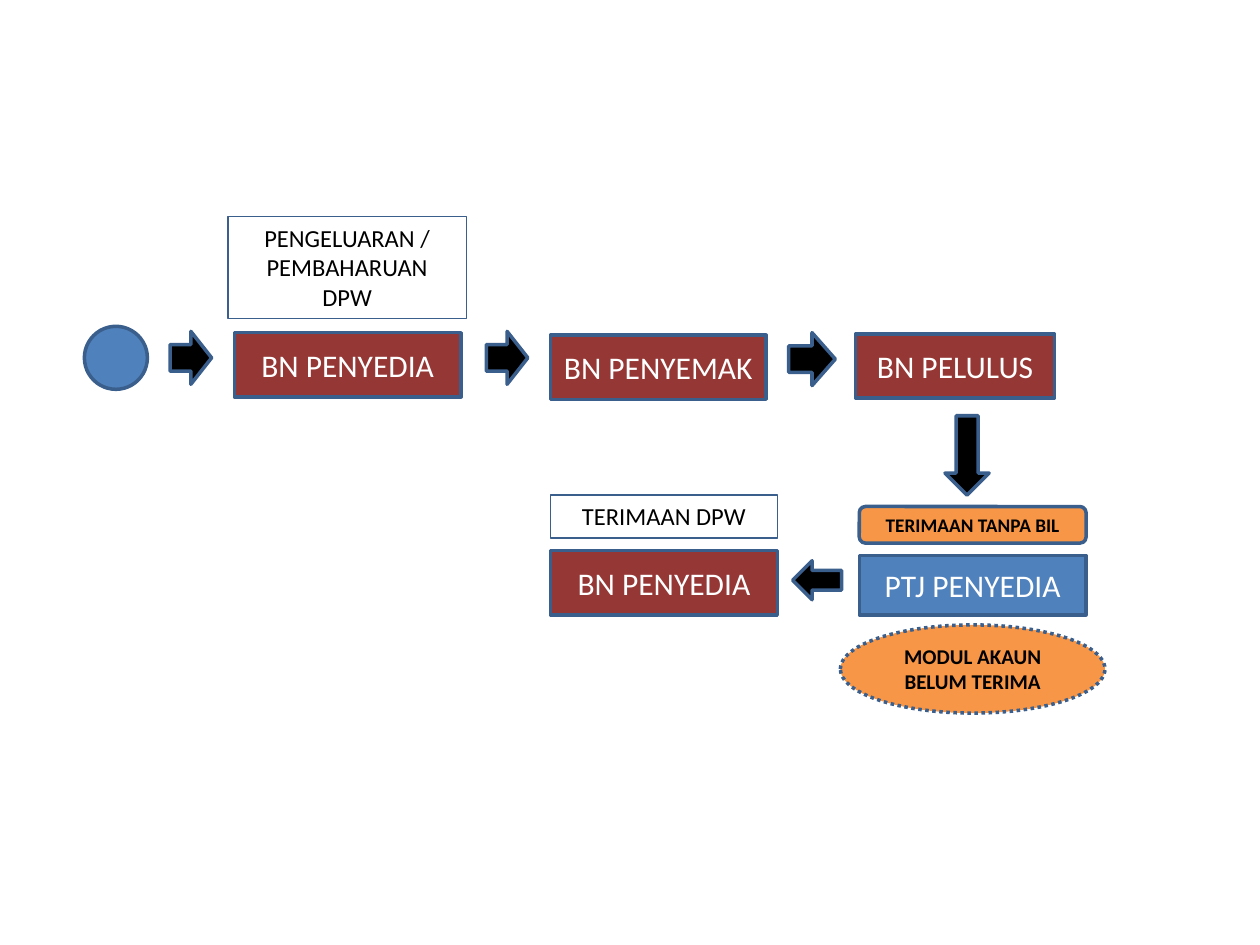
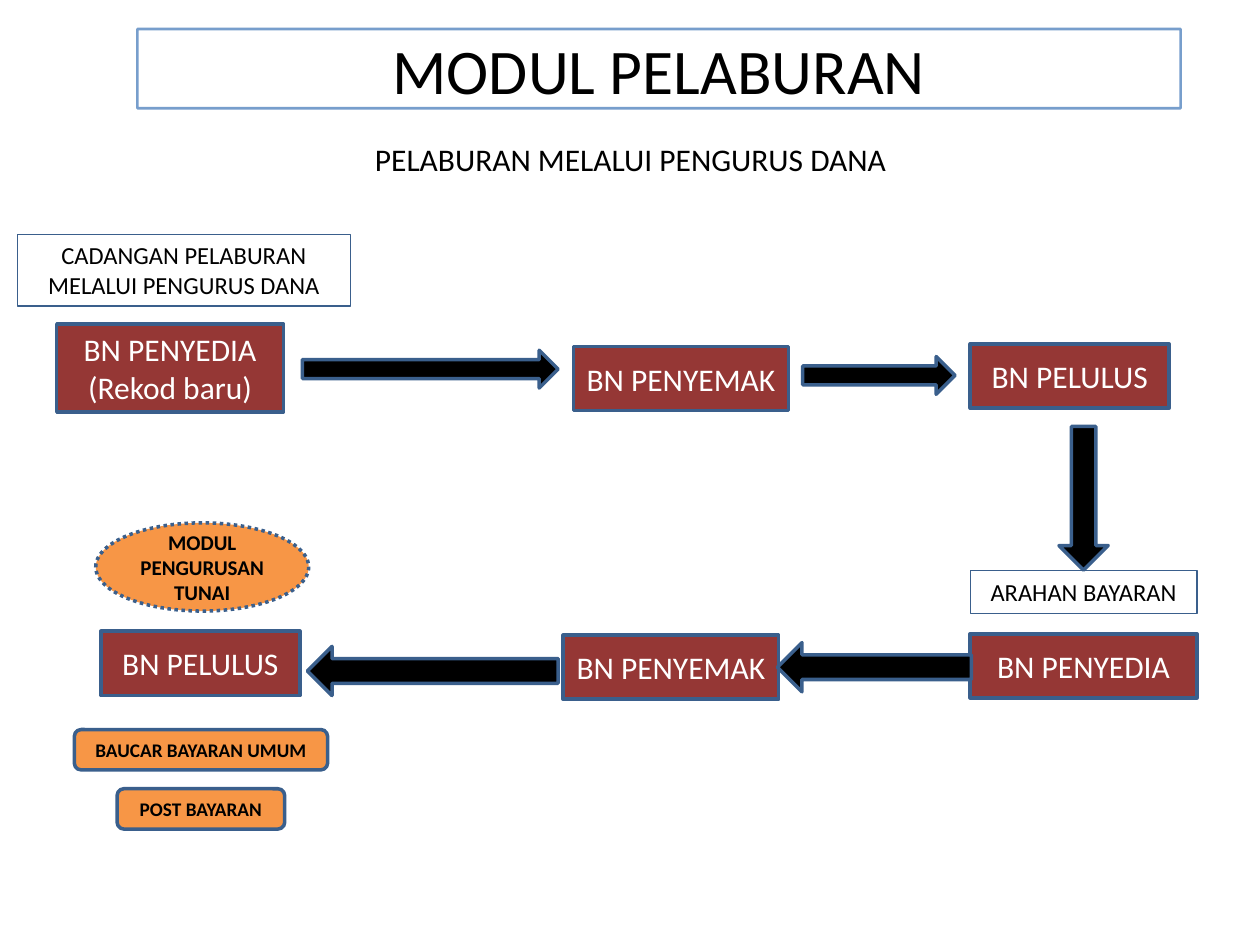
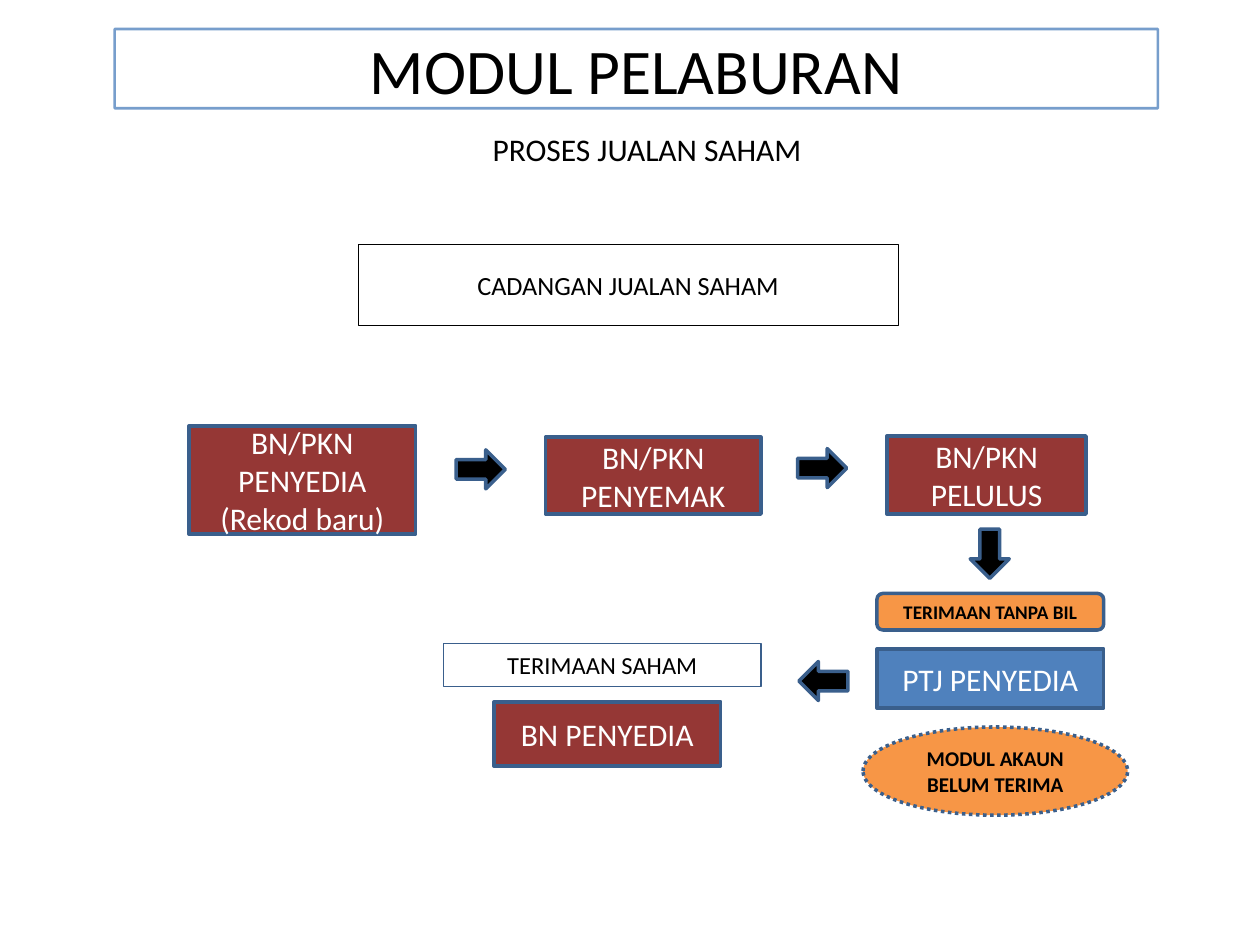
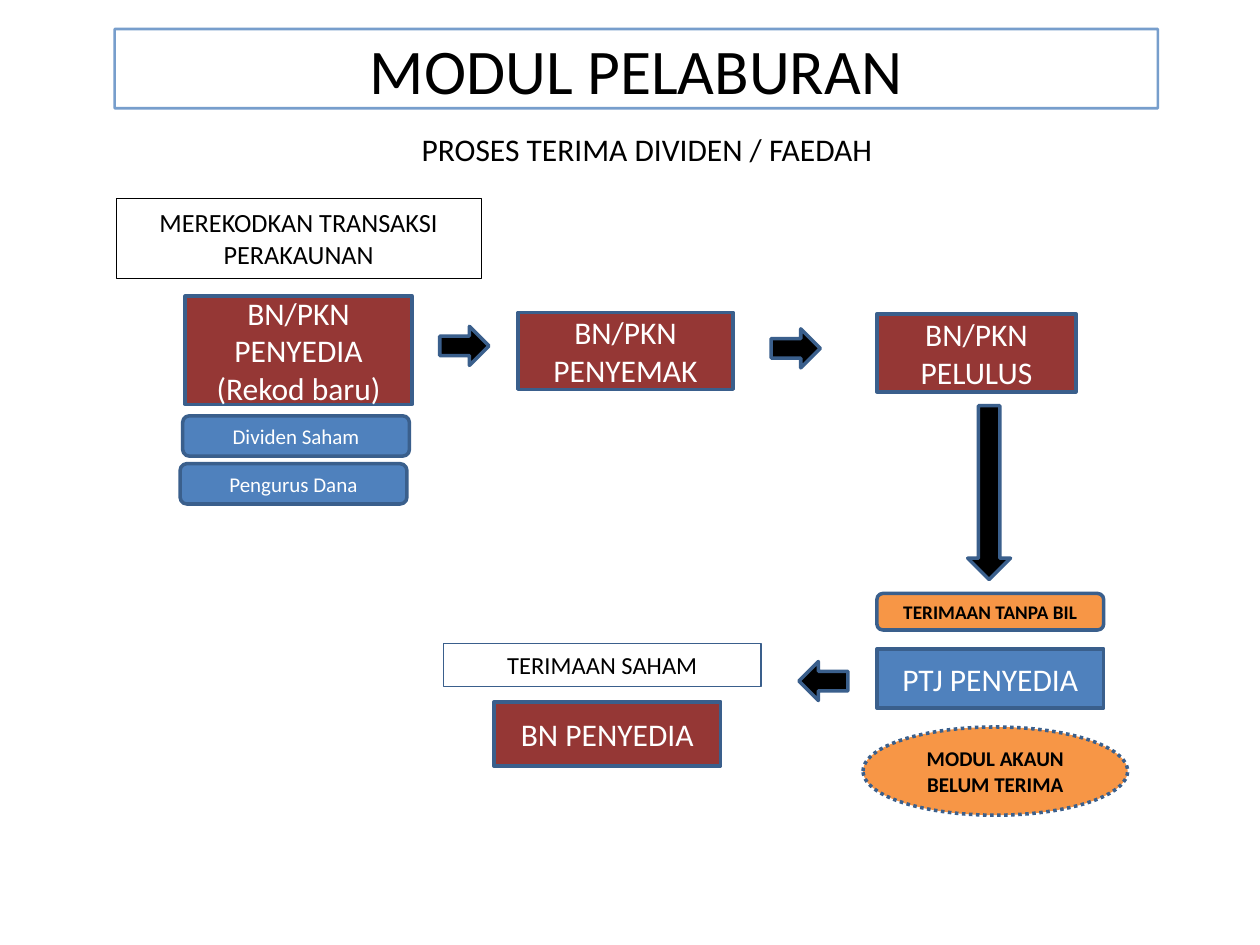
"""Build four flow-chart slides of the investment module."""
from lxml.etree import SubElement
from pptx import Presentation
from pptx.dml.color import RGBColor
from pptx.enum.dml import MSO_LINE
from pptx.enum.shapes import MSO_SHAPE as Shape
from pptx.enum.text import MSO_ANCHOR as Anchor, MSO_AUTO_SIZE as AutoSize, PP_ALIGN as Align
from pptx.oxml.ns import qn
from pptx.util import Emu, Pt

PX = 9144
FONT = "Calibri"
BLACK = RGBColor(0x00, 0x00, 0x00)
WHITE = RGBColor(0xFF, 0xFF, 0xFF)
MAROON = RGBColor(0x95, 0x37, 0x35)
BLUE = RGBColor(0x4F, 0x81, 0xBD)
NAVY = RGBColor(0x3A, 0x5F, 0x8C)
ORANGE = RGBColor(0xF7, 0x96, 0x46)
MAKER, CHECKER, APPROVER = 180, 171, 158
TITLE_ONLY, BLANK = 5, 6


class FlowDeck:
    def __init__(self):
        self.deck = Presentation()
        self.deck.slide_width = Emu(1000 * PX)
        self.deck.slide_height = Emu(750 * PX)
        self.page = None

    def add_page(self, layout):
        self.page = self.deck.slides.add_slide(self.deck.slide_layouts[layout])

    def add_text(self, box, text, size, color=BLACK, bold=False, anchor=Anchor.MIDDLE, grow=False):
        frame = box.text_frame
        frame.word_wrap = True
        frame.vertical_anchor = anchor
        frame.auto_size = AutoSize.SHAPE_TO_FIT_TEXT if grow else AutoSize.NONE
        for index, line in enumerate(text.split("\n")):
            para = frame.add_paragraph() if index else frame.paragraphs[0]
            para.alignment = Align.CENTER
            span = para.add_run()
            span.text = line
            span.font.name = FONT
            span.font.size = Pt(size)
            span.font.bold = bold
            span.font.color.rgb = color

    def shape(self, kind, left, top, width, height, fill=None, line=NAVY, weight=2):
        box = self.page.shapes.add_shape(kind, *(Emu(n * PX) for n in (left, top, width, height)))
        box.shadow.inherit = False
        if fill is None:
            box.fill.background()
        else:
            box.fill.solid()
            box.fill.fore_color.rgb = fill
        box.line.color.rgb = line
        box.line.width = Pt(weight)
        return box

    def title(self, text, left):
        box = self.page.shapes.title
        box.left, box.top, box.width, box.height = (Emu(n * PX) for n in (left, 23, 828, 63))
        box.line.color.rgb = BLUE
        box.line.width = Pt(1.5)
        SubElement(box.element.spPr.find(".//" + qn("a:srgbClr")), qn("a:alpha"), val="76000")
        self.add_text(box, text, 36.3)

    def subtitle(self, text, left, top):
        box = self.page.shapes.add_textbox(*(Emu(n * PX) for n in (left, top, 539, 40)))
        self.add_text(box, text, 18, anchor=Anchor.TOP, grow=True)

    def stage(self, text, left, top, width, height=51, fill=MAROON):
        self.add_text(self.shape(Shape.RECTANGLE, left, top, width, height, fill), text, 18, WHITE)

    def label(self, text, left, top, width, height=34):
        box = self.shape(Shape.RECTANGLE, left, top, width, height, weight=0.75)
        self.add_text(box, text, 14, anchor=Anchor.TOP, grow=True)

    def heading(self, text, left, top, width):
        box = self.shape(Shape.RECTANGLE, left, top, width, 64, WHITE, BLACK, 0.25)
        self.add_text(box, text, 15)

    def badge(self, text, left, top, width, height):
        box = self.shape(Shape.ROUNDED_RECTANGLE, left, top, width, height, ORANGE)
        self.add_text(box, text, 11, bold=True)

    def option(self, text, left, top):
        box = self.shape(Shape.FLOWCHART_ALTERNATE_PROCESS, left, top, 180, 32, BLUE)
        self.add_text(box, text, 12, WHITE)

    def module(self, text, left, top, width=210):
        box = self.shape(Shape.OVAL, left, top, width, 70, ORANGE)
        box.line.dash_style = MSO_LINE.ROUND_DOT
        self.add_text(box, text, 12, bold=True)

    def arrow(self, left, top, width=39, height=31, turn=0):
        self.shape(Shape.RIGHT_ARROW, left, top, width, height, BLACK).rotation = turn

    def start(self, left, top):
        self.shape(Shape.FLOWCHART_CONNECTOR, left, top, 50, 50, BLUE)

    def receipt(self):
        self.badge("TERIMAAN TANPA BIL", 696, 471, 180, 29)
        self.stage("PTJ PENYEDIA", 696, 515, MAKER, 47, BLUE)
        self.module("MODUL AKAUN BELUM TERIMA", 685, 577)
        self.arrow(634, 525, turn=180)
        self.label("TERIMAAN SAHAM", 352, 511, 252)
        self.stage("BN PENYEDIA", 392, 557, MAKER)


def build_renewal(flow):
    flow.add_page(BLANK)
    flow.start(67, 259)
    for left, top, width in ((135, 263, 33), (386, 263, 33), (626, 264, 37)):
        flow.arrow(left, top, width, 42)
    flow.label("PENGELUARAN / PEMBAHARUAN DPW", 181, 172, 189, 81)
    flow.stage("BN PENYEDIA", 186, 264, MAKER)
    flow.stage("BN PENYEMAK", 437, 266, CHECKER)
    flow.stage("BN PELULUS", 679, 265, APPROVER)
    flow.arrow(736, 344, 63, 35, 90)
    flow.badge("TERIMAAN TANPA BIL", 682, 402, 180, 29)
    flow.stage("PTJ PENYEDIA", 682, 441, MAKER, 47, BLUE)
    flow.module("MODUL AKAUN BELUM TERIMA", 667, 496)
    flow.arrow(629, 445, turn=180)
    flow.label("TERIMAAN DPW", 437, 393, 180)
    flow.stage("BN PENYEDIA", 437, 437, MAKER)


def build_fund_manager(flow):
    flow.add_page(TITLE_ONLY)
    flow.title("MODUL PELABURAN", 109)
    flow.subtitle("PELABURAN MELALUI PENGURUS DANA", 231, 106)
    flow.label("CADANGAN PELABURAN MELALUI PENGURUS DANA", 14, 186, 264, 57)
    flow.stage("BN PENYEDIA\n(Rekod baru)", 45, 257, MAKER, 70)
    flow.arrow(240, 278, 203, 30)
    flow.stage("BN PENYEMAK", 455, 275, CHECKER)
    flow.arrow(637, 283, 121, 30)
    flow.stage("BN PELULUS", 770, 273, APPROVER)
    flow.arrow(803, 376, 114, 39, 90)
    flow.label("ARAHAN BAYARAN", 770, 453, 180)
    flow.stage("BN PENYEDIA", 770, 503, MAKER)
    flow.stage("BN PENYEMAK", 447, 504, CHECKER)
    flow.arrow(617, 510, 154, 39, 180)
    flow.arrow(244, 513, 199, 39, 180)
    flow.stage("BN PELULUS", 80, 501, APPROVER)
    flow.module("MODUL PENGURUSAN TUNAI", 76, 415, 169)
    flow.badge("BAUCAR BAYARAN UMUM", 59, 579, 201, 32)
    flow.badge("POST BAYARAN", 93, 626, 133, 32)


def build_share_sale(flow):
    flow.add_page(TITLE_ONLY)
    flow.title("MODUL PELABURAN", 91)
    flow.subtitle("PROSES JUALAN SAHAM", 244, 98)
    flow.heading("CADANGAN JUALAN SAHAM", 284, 194, 429)
    flow.stage("BN/PKN PENYEDIA\n(Rekod baru)", 150, 338, MAKER, 86)
    flow.arrow(362, 357)
    flow.stage("BN/PKN PENYEMAK", 433, 347, CHECKER, 61)
    flow.arrow(633, 356)
    flow.stage("BN/PKN PELULUS", 704, 346, APPROVER, 62)
    flow.arrow(766, 424, turn=90)
    flow.receipt()


def build_dividend(flow):
    flow.add_page(TITLE_ONLY)
    flow.title("MODUL PELABURAN", 91)
    flow.subtitle("PROSES TERIMA DIVIDEN / FAEDAH", 244, 98)
    flow.heading("MEREKODKAN TRANSAKSI PERAKAUNAN", 92, 157, 290)
    flow.stage("BN/PKN PENYEDIA\n(Rekod baru)", 147, 235, MAKER, 86)
    flow.option("Dividen Saham", 145, 330)
    flow.option("Pengurus Dana", 143, 368)
    flow.arrow(349, 259)
    flow.stage("BN/PKN PENYEMAK", 411, 248, CHECKER, 61)
    flow.arrow(612, 261)
    flow.stage("BN/PKN PELULUS", 696, 249, APPROVER, 62)
    flow.arrow(716, 374, 138, 34, 90)
    flow.receipt()


def main():
    flow = FlowDeck()
    for build in (build_renewal, build_fund_manager, build_share_sale, build_dividend):
        build(flow)
    flow.deck.save("out.pptx")


if __name__ == "__main__":
    main()
